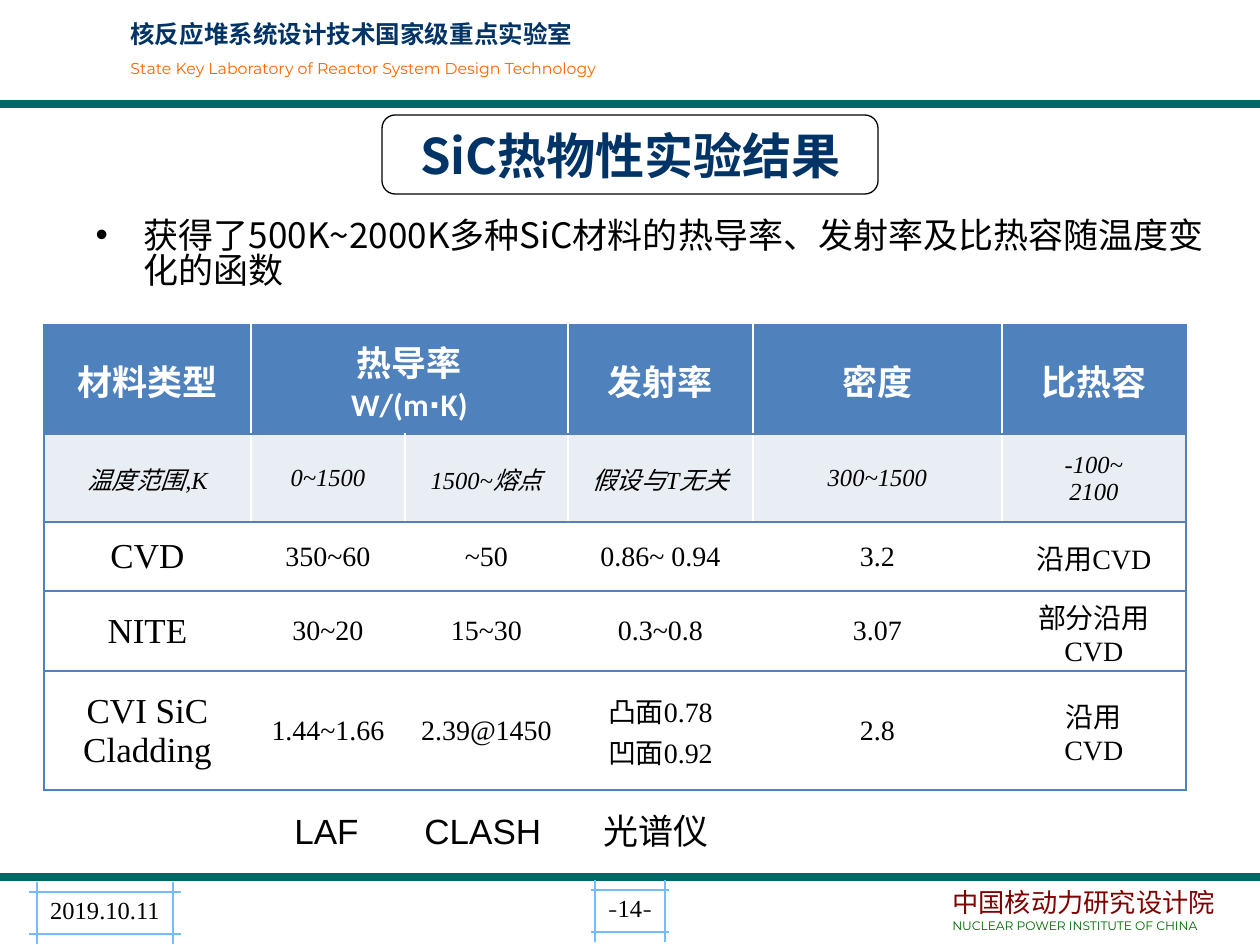
from pptx import Presentation
from pptx import util as u
from pptx.dml.color import RGBColor
from pptx.enum import shapes, text
from pptx.oxml.ns import qn
from lxml import etree

PX = u.Inches(1) / 126
COLORS = {"navy": "003366", "orange": "FF6600", "teal": "006666", "maroon": "800000",
          "green": "006600", "sky": "74BDFA", "black": "000000", "white": "FFFFFF",
          "blue": "4F81BD", "pale": "E9EDF4"}
TIMES, SANS, CAPTION = "Times New Roman", "Noto Sans CJK SC", "Montserrat"
CENTER = text.PP_ALIGN.CENTER
MIDDLE, BOTTOM = text.MSO_ANCHOR.MIDDLE, text.MSO_ANCHOR.BOTTOM


def px(*values):
    return [u.Emu(round(value * PX)) for value in values]


def rgb(name):
    return RGBColor.from_string(COLORS[name])


def add_run(paragraph, words, size, font=TIMES, color="black", bold=False, italic=False):
    run = paragraph.add_run()
    run.text = words
    run.font.size, run.font.name = u.Pt(size), font
    run.font.bold, run.font.italic = bold, italic
    run.font.color.rgb = rgb(color)
    east_asian = etree.Element(qn("a:ea"), typeface=SANS)
    run.font._element.find(qn("a:latin")).addnext(east_asian)


def add_text_box(slide, box, anchor=text.MSO_ANCHOR.TOP):
    frame = slide.shapes.add_textbox(*px(*box)).text_frame
    frame.word_wrap = True
    frame.vertical_anchor = anchor
    return frame


def add_line(slide, start, end, color, width):
    line = slide.shapes.add_connector(shapes.MSO_CONNECTOR.STRAIGHT, *px(*start, *end))
    line.line.color.rgb, line.line.width = rgb(color), u.Pt(width)
    etree.SubElement(line._element.spPr, qn("a:effectLst"))


def add_outline(slide, kind, box, color, width):
    shape = slide.shapes.add_shape(kind, *px(*box))
    shape.shadow.inherit = False
    shape.fill.background()
    shape.line.color.rgb, shape.line.width = rgb(color), u.Pt(width)


def add_header(slide, box):
    x, y, width, height = box
    frame = add_text_box(slide, (x + 118, y + 13, 562, 83))
    add_run(frame.paragraphs[0], "核反应堆系统设计技术国家级重点实验室", 14,
            color="navy", bold=True)
    subtitle = frame.add_paragraph()
    subtitle.space_before = u.Pt(6)
    add_run(subtitle, "State Key Laboratory of Reactor System Design Technology", 9,
            CAPTION, "orange")
    add_line(slide, (x, y + height), (x + width, y + height), "teal", 4.5)


def add_crossed_frame(slide, box, overhang, runs):
    """Rectangle whose sides run past its corners, with centred text inside."""
    x, y, width, height = box
    add_outline(slide, shapes.MSO_SHAPE.RECTANGLE, box, "sky", 1)
    for side in (y, y + height):
        add_line(slide, (x - overhang, side), (x + width + overhang, side), "sky", 1)
    for side in (x, x + width):
        add_line(slide, (side, y - 10), (side, y + height + 10), "sky", 1)
    frame = add_text_box(slide, (x - 12, y, width + 24, 39), BOTTOM)
    frame.paragraphs[0].alignment = CENTER
    for words, font in runs:
        add_run(frame.paragraphs[0], words, 14, font)


def add_footer(slide, box):
    x, y, width, _ = box
    add_line(slide, (x, y), (x + width, y), "teal", 4.5)
    add_crossed_frame(slide, (x + 37, y + 15, 136, 42), 8, [("2019.10.11", TIMES)])
    add_crossed_frame(slide, (x + 595, y + 13, 70, 42), 4,
                      [("-", "Comic Neue"), ("14", TIMES), ("-", "Comic Neue")])
    frame = add_text_box(slide, (x + 940, y + 8, 315, 59))
    frame.paragraphs[0].line_spacing = 0.85
    add_run(frame.paragraphs[0], "中国核动力研究设计院", 15, color="maroon")
    add_run(frame.add_paragraph(), "NUCLEAR POWER INSTITUTE OF CHINA", 7, CAPTION, "green")


def place(placeholder, box):
    placeholder.left, placeholder.top, placeholder.width, placeholder.height = px(*box)
    placeholder.text_frame.auto_size = text.MSO_AUTO_SIZE.NONE
    return placeholder.text_frame


def add_title(slide, box):
    add_outline(slide, shapes.MSO_SHAPE.ROUNDED_RECTANGLE, box, "black", 0.75)
    frame = place(slide.shapes.title, box)
    frame.vertical_anchor = MIDDLE
    frame.paragraphs[0].alignment = CENTER
    add_run(frame.paragraphs[0], "SiC热物性实验结果", 28, SANS, "navy", bold=True)


def add_summary(slide, box):
    paragraph = place(slide.placeholders[1], box).paragraphs[0]
    properties = paragraph._p.get_or_add_pPr()
    indent = px(48)[0]
    properties.set("marL", str(indent))
    properties.set("indent", str(-indent))
    etree.SubElement(properties, qn("a:buChar"), char="•")
    paragraph.space_before = u.Pt(0)
    paragraph.line_spacing = 0.83
    add_run(paragraph, "获得了500K~2000K多种SiC材料的热导率、发射率及比热容随温度变化的函数",
            20, SANS)


def set_borders(cell, sides):
    properties = cell._tc.get_or_add_tcPr()
    for position, side in enumerate(sides):
        border = etree.Element(qn("a:ln" + side), w=str(u.Pt(1)))
        fill = etree.SubElement(border, qn("a:solidFill"))
        etree.SubElement(fill, qn("a:srgbClr"), val=COLORS["blue"])
        properties.insert(position, border)


def fill_cell(cell, words, styles, fill):
    cell.margin_left = cell.margin_right = cell.margin_top = px(1)[0]
    cell.margin_bottom = 0
    cell.vertical_anchor = MIDDLE
    if fill:
        cell.fill.solid()
        cell.fill.fore_color.rgb = rgb(fill)
    else:
        cell.fill.background()
    for index, line in enumerate(words.split("\n")):
        frame = cell.text_frame
        paragraph = frame.add_paragraph() if index else frame.paragraphs[0]
        paragraph.alignment = CENTER
        add_run(paragraph, line, **styles[min(index, len(styles) - 1)])


def add_property_table(slide, box):
    widths, heights = [207, 154, 163, 185, 249, 184], [109, 88, 69, 80, 119]
    rows = [
        ["材料类型", "热导率\nW/(m∙K)", "", "发射率", "密度", "比热容"],
        ["温度范围,K", "0~1500", "1500~熔点", "假设与T无关", "300~1500", "-100~\n2100"],
        ["CVD", "350~60", "~50", "0.86~ 0.94", "3.2", "沿用CVD"],
        ["NITE", "30~20", "15~30", "0.3~0.8", "3.07", "部分沿用\nCVD"],
        ["CVI SiC Cladding", "1.44~1.66", "2.39@1450", "凸面0.78\n凹面0.92", "2.8", "沿用\nCVD"],
    ]
    heading = [dict(size=20, color="white", bold=True),
               dict(size=18, font="Calibri", color="white", bold=True)]
    table = slide.shapes.add_table(len(rows), len(widths), *px(*box)).table
    table.first_row = table.horz_banding = False
    for column, width in zip(table.columns, widths):
        column.width = px(width)[0]
    for row, height in zip(table.rows, heights):
        row.height = px(height)[0]
    table.cell(0, 1).merge(table.cell(0, 2))

    last = len(widths) - 1
    for r, row in enumerate(rows):
        for c, words in enumerate(row):
            cell = table.cell(r, c)
            if r == 0:
                styles, fill = heading, "blue"
            elif r == 1:
                styles, fill = [dict(size=14, italic=True)], "pale"
            else:
                styles, fill = [dict(size=16 if c else 20)], None
            if not cell.is_spanned:
                fill_cell(cell, words, styles, fill)
            set_borders(cell, ["L"] * (c == 0) + ["R"] * (c == last) + ["T", "B"])


def add_method_labels(slide, box):
    x, y, _, height = box
    for offset, width, label in [(0, 100, "LAF"), (130, 158, "CLASH"), (309, 158, "光谱仪")]:
        frame = add_text_box(slide, (x + offset, y, width, height))
        add_run(frame.paragraphs[0], label, 20, "Arial")


def main():
    presentation = Presentation()
    presentation.slide_width, presentation.slide_height = px(1260, 945)
    slide = presentation.slides.add_slide(presentation.slide_layouts[1])
    add_header(slide, (0, 0, 1260, 104))
    add_footer(slide, (0, 877, 1260, 68))
    add_title(slide, (382, 115, 496, 79))
    add_summary(slide, (83, 214, 1142, 118))
    add_property_table(slide, (44, 325, 1142, 465))
    add_method_labels(slide, (282, 803, 467, 55))
    presentation.save("out.pptx")


if __name__ == "__main__":
    main()
